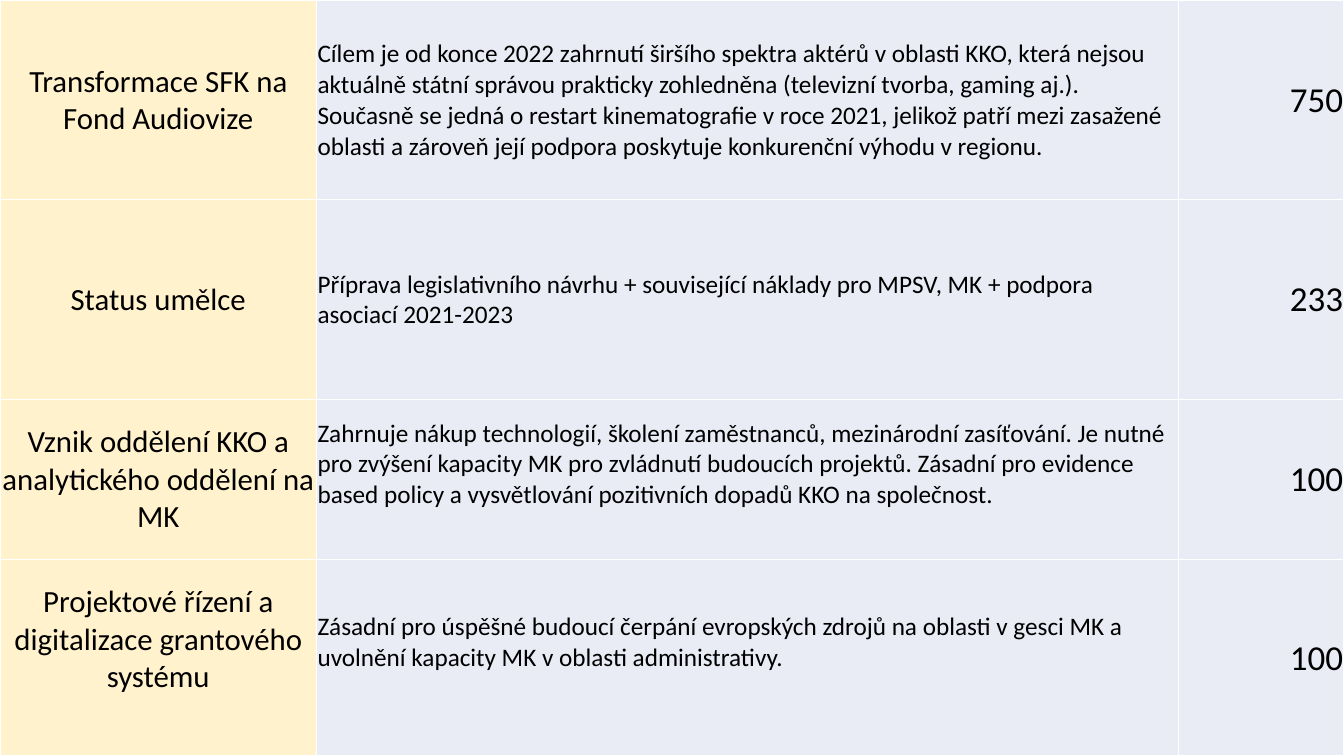
from lxml.etree import SubElement
from pptx import Presentation
from pptx.dml.color import RGBColor
from pptx.enum.text import MSO_ANCHOR, PP_ALIGN
from pptx.oxml.ns import qn
from pptx.util import Inches, Pt


def color(hex_value):
    return RGBColor.from_string(hex_value)


def add_borders(cell, hex_value, width):
    properties = cell._tc.get_or_add_tcPr()
    for side in ("lnL", "lnR", "lnT", "lnB"):
        line = SubElement(properties, qn(f"a:{side}"), w=str(width))
        fill = SubElement(line, qn("a:solidFill"))
        SubElement(fill, qn("a:srgbClr"), val=hex_value)


projects = [
    (
        "Transformace SFK na Fond Audiovize",
        "Cílem je od konce 2022 zahrnutí širšího spektra aktérů v oblasti KKO, která nejsou "
        "aktuálně státní správou prakticky zohledněna (televizní tvorba, gaming aj.). "
        "Současně se jedná o restart kinematografie v roce 2021, jelikož patří mezi zasažené "
        "oblasti a zároveň její podpora poskytuje konkurenční výhodu v regionu.",
        "750",
    ),
    (
        "Status umělce",
        "Příprava legislativního návrhu + související náklady pro MPSV, MK + podpora "
        "asociací 2021-2023",
        "233",
    ),
    (
        "Vznik oddělení KKO a analytického oddělení na MK",
        "Zahrnuje nákup technologií, školení zaměstnanců, mezinárodní zasíťování. Je nutné "
        "pro zvýšení kapacity MK pro zvládnutí budoucích projektů. Zásadní pro evidence "
        "based policy a vysvětlování pozitivních dopadů KKO na společnost.",
        "100",
    ),
    (
        "Projektové řízení a digitalizace grantového systému",
        "Zásadní pro úspěšné budoucí čerpání evropských zdrojů na oblasti v gesci MK a "
        "uvolnění kapacity MK v oblasti administrativy.",
        "100",
    ),
]
column_styles = [
    (3.14, 22, PP_ALIGN.CENTER, "FFF2CC"),
    (8.55, 18, PP_ALIGN.LEFT, "E9EBF5"),
    (1.64, 25, PP_ALIGN.RIGHT, "E9EBF5"),
]
row_heights = [1.98, 1.98, 1.59, 1.95]
bottom_margins = {(2, 1): 0.31, (3, 0): 0.37, (3, 1): 0.31}

presentation = Presentation()
presentation.slide_width = Inches(13.33)
presentation.slide_height = Inches(7.5)
slide = presentation.slides.add_slide(presentation.slide_layouts[6])

budget = slide.shapes.add_table(
    len(projects), len(column_styles), 0, 0, Inches(13.33), Inches(7.5)
).table
budget.first_row = False
budget.horz_banding = False

for column, (width, *_) in zip(budget.columns, column_styles):
    column.width = Inches(width)

for row_index, (project, height) in enumerate(zip(projects, row_heights)):
    budget.rows[row_index].height = Inches(height)
    for column_index, (_, size, alignment, background) in enumerate(column_styles):
        cell = budget.cell(row_index, column_index)
        cell.text = project[column_index]
        cell.vertical_anchor = MSO_ANCHOR.MIDDLE
        cell.margin_left = cell.margin_right = cell.margin_top = Inches(0.01)
        cell.margin_bottom = Inches(bottom_margins.get((row_index, column_index), 0))
        add_borders(cell, "FFFFFF", Pt(1))
        cell.fill.solid()
        cell.fill.fore_color.rgb = color(background)
        paragraph = cell.text_frame.paragraphs[0]
        paragraph.alignment = alignment
        paragraph.font.name = "Calibri"
        paragraph.font.size = Pt(size)
        paragraph.font.color.rgb = color("000000")

presentation.save("out.pptx")
